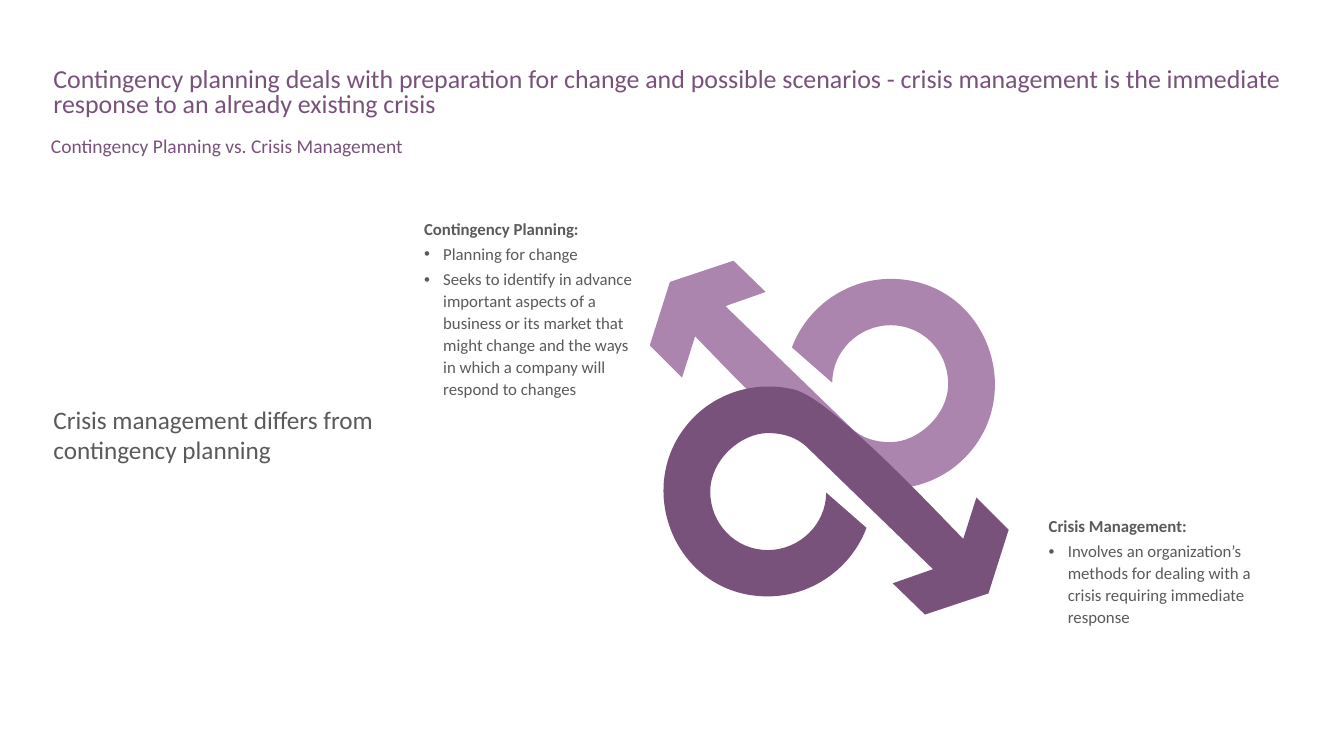
import lxml.etree
import pptx
import pptx.dml.color
import pptx.enum.text
import pptx.oxml.ns
import pptx.util

COLORS = {"plum": "79527B", "mauve": "AB85AD", "gray": "595A59"}
FONT = "Calibri"
COLUMNS, ROWS = 80, 45
CELL = pptx.util.Inches(7.5) // ROWS
OUTLINE_SIZE = (396, 351)
OUTLINE_START = (332, 196)
OUTLINE_SEGMENTS = [
    [(306, 222), (268, 232), (232, 223)],
    [(196, 213), (101, 112), (65, 75)],
    [(52, 116)], [(20, 84)], [(40, 21)], [(103, 0)], [(135, 31)],
    [(95, 45)], [(221, 167)],
    [(230, 175), (242, 180), (259, 180)],
    [(285, 180), (316, 154), (316, 122)],
    [(316, 90), (291, 64), (259, 64)],
    [(227, 64), (201, 90), (201, 121)],
    [(161, 86)],
    [(176, 46), (215, 18), (259, 18)],
    [(353, 18), (396, 132), (332, 196)],
]


def grid(*cells):
    """Turn grid cells into slide lengths."""
    return tuple(round(cell * CELL) for cell in cells)


def rgb(name):
    """Look up a named colour."""
    return pptx.dml.color.RGBColor.from_string(COLORS[name])


def set_bullet(paragraph, character=None, indent=0):
    """Give the paragraph a hanging bullet, or none."""
    properties = paragraph._p.get_or_add_pPr()
    properties.set("marL", str(indent))
    properties.set("indent", str(-indent))
    tag = "a:buChar" if character else "a:buNone"
    bullet = lxml.etree.SubElement(properties, pptx.oxml.ns.qn(tag))
    if character:
        bullet.set("char", character)


def write_paragraph(paragraph, text, *, size, color, bold=False, bullet=None,
                    indent=0, line_spacing=1.0, space_before=0):
    """Write one formatted paragraph."""
    set_bullet(paragraph, bullet, indent)
    paragraph.alignment = pptx.enum.text.PP_ALIGN.LEFT
    paragraph.line_spacing = line_spacing
    paragraph.space_before = pptx.util.Pt(space_before)
    paragraph.space_after = pptx.util.Pt(0)
    run = paragraph.add_run()
    run.text = text
    run.font.name = FONT
    run.font.size = pptx.util.Pt(size)
    run.font.bold = bold
    run.font.color.rgb = rgb(color)


def prepare_frame(shape, box, *, margins=(0.1, 0.05), anchor="TOP", fit="NONE"):
    """Move a placeholder to its box and return its text frame."""
    shape.left, shape.top, shape.width, shape.height = box
    frame = shape.text_frame
    frame.word_wrap = True
    frame.auto_size = pptx.enum.text.MSO_AUTO_SIZE[fit]
    frame.vertical_anchor = pptx.enum.text.MSO_ANCHOR[anchor]
    frame.margin_left = frame.margin_right = pptx.util.Inches(margins[0])
    frame.margin_top = frame.margin_bottom = pptx.util.Inches(margins[1])
    return frame


def fill_text(shape, box, text, anchor="TOP", **text_format):
    """Fill a placeholder with a single paragraph."""
    frame = prepare_frame(shape, box, anchor=anchor)
    write_paragraph(frame.paragraphs[0], text, **text_format)


def fill_list(shape, box, heading, items):
    """Fill a placeholder with a bold heading and bulleted items."""
    frame = prepare_frame(shape, box, margins=(0.04, 0.02), fit="SHAPE_TO_FIT_TEXT")
    common = {"size": 12, "color": "gray", "line_spacing": 1.09}
    write_paragraph(frame.paragraphs[0], heading, bold=True, **common)
    for item in items:
        write_paragraph(frame.add_paragraph(), item, bullet="•",
                        indent=pptx.util.Inches(0.19), space_before=2.4, **common)


def bend_segments(shape):
    """Turn each three-point segment of the outline into a cubic curve."""
    lines = list(shape._element.iter(pptx.oxml.ns.qn("a:lnTo")))
    for segment in OUTLINE_SEGMENTS:
        group, lines = lines[:len(segment)], lines[len(segment):]
        if len(group) == 3:
            curve = lxml.etree.Element(pptx.oxml.ns.qn("a:cubicBezTo"))
            group[0].addprevious(curve)
            for line in group:
                curve.append(line[0])
                line.getparent().remove(line)


def draw_arrow(slide, points, color):
    """Draw one looped arrow."""
    builder = slide.shapes.build_freeform(*points[0])
    builder.add_line_segments(points[1:], close=True)
    shape = builder.convert_to_shape()
    bend_segments(shape)
    shape.shadow.inherit = False
    shape.fill.solid()
    shape.fill.fore_color.rgb = rgb(color)
    shape.line.fill.background()


def draw_knot(slide, box):
    """Draw two interlocked arrows, the second turned half a circle."""
    left, top, width, height = box
    outline = [OUTLINE_START] + [point for segment in OUTLINE_SEGMENTS for point in segment]
    shares = [(x / OUTLINE_SIZE[0], y / OUTLINE_SIZE[1]) for x, y in outline]
    turned = [(1 - x, 1 - y) for x, y in shares]
    for arrow, color in ((shares, "mauve"), (turned, "plum")):
        points = [(round(left + x * width), round(top + y * height)) for x, y in arrow]
        draw_arrow(slide, points, color)


def build_comparison_slide(presentation):
    """Build the slide that sets contingency planning against crisis management."""
    slide = presentation.slides.add_slide(presentation.slide_layouts[4])
    headline, subtitle, planning, statement, crisis = slide.placeholders
    fill_text(headline, grid(2.58, 3.78, 75.24, 3.84),
              "Contingency planning deals with preparation for change and possible "
              "scenarios - crisis management is the immediate response to an already "
              "existing crisis", size=18.5, color="plum", line_spacing=0.8)
    fill_text(subtitle, grid(2.43, 8.06, 75.36, 1.68),
              "Contingency Planning vs. Crisis Management",
              size=13.9, color="plum", line_spacing=0.7)
    fill_text(statement, grid(2.58, 10.74, 20.94, 30.24),
              "Crisis management differs from contingency planning",
              anchor="MIDDLE", size=18, color="gray")
    draw_knot(slide, grid(37.48, 15.52, 23.76, 21.06))
    fill_list(planning, grid(25, 12.78, 13, 9.48), "Contingency Planning:", [
        "Planning for change",
        "Seeks to identify in advance important aspects of a business or its market "
        "that might change and the ways in which a company will respond to changes",
    ])
    fill_list(crisis, grid(62.18, 30.48, 13, 5.94), "Crisis Management:", [
        "Involves an organization’s methods for dealing with a crisis requiring "
        "immediate response",
    ])


def main():
    """Create and save the presentation."""
    presentation = pptx.Presentation()
    presentation.slide_width, presentation.slide_height = grid(COLUMNS, ROWS)
    build_comparison_slide(presentation)
    presentation.save("out.pptx")


if __name__ == "__main__":
    main()
